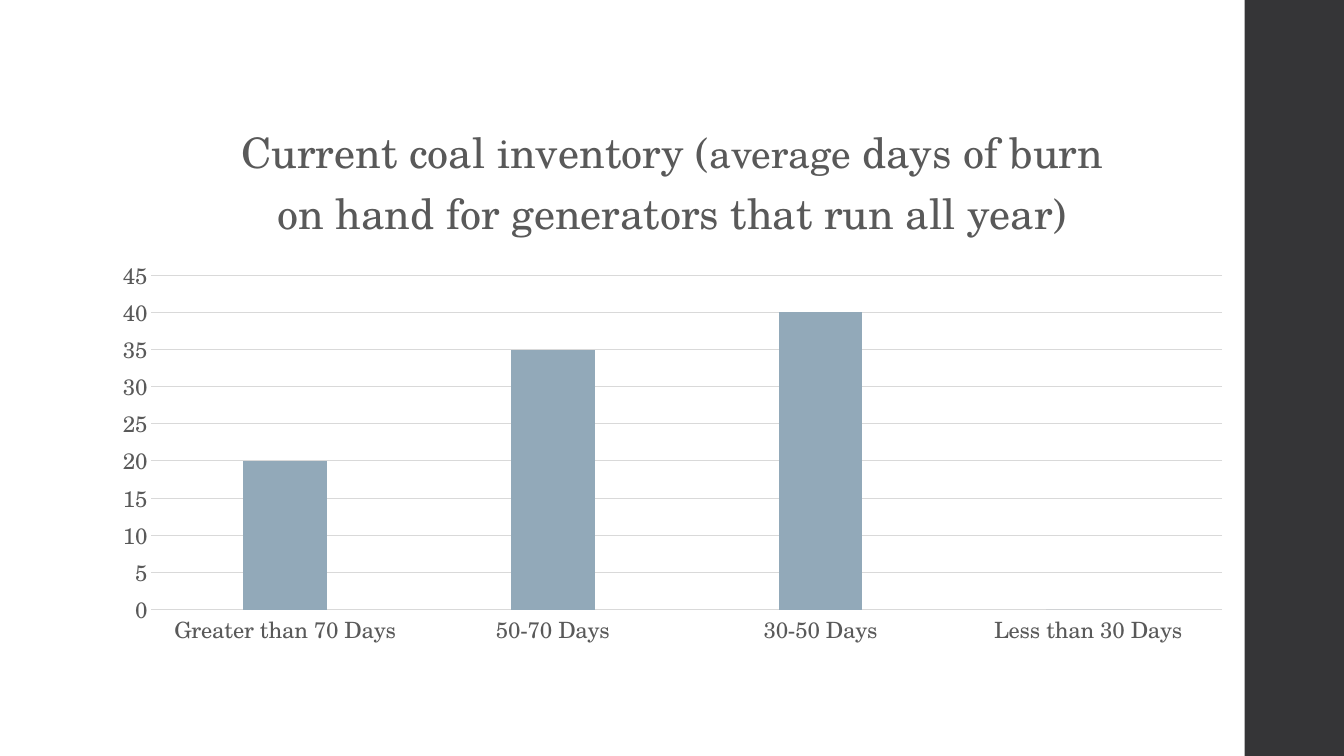
from dataclasses import dataclass

import pptx
import pptx.chart.data
import pptx.dml.color
import pptx.enum.chart
import pptx.enum.shapes
import pptx.oxml
import pptx.util
from pptx.oxml import ns

Pt = pptx.util.Pt
RGBColor = pptx.dml.color.RGBColor

FONT = "TeX Gyre Schola"
CHARCOAL = RGBColor(0x35, 0x35, 0x37)
TEXT_GRAY = RGBColor(0x59, 0x59, 0x59)
RULE_GRAY = RGBColor(0xD9, 0xD9, 0xD9)
BAR_BLUE = RGBColor(0x92, 0xA9, 0xB9)


@dataclass(frozen=True)
class TitlePart:
    text: str
    size: float


@dataclass(frozen=True)
class Inventory:
    days: str
    value: int


HEADING = [
    TitlePart("Current coal inventory (", 30),
    TitlePart("average", 28),
    TitlePart(" days of burn on hand for generators that run all year)", 30),
]
INVENTORIES = [
    Inventory("Greater than 70 Days", 20),
    Inventory("50-70 Days", 35),
    Inventory("30-50 Days", 40),
    Inventory("Less than 30 Days", 0),
]


def style_font(font, size: float) -> None:
    font.name = FONT
    font.size = Pt(size)
    font.bold = False
    font.color.rgb = TEXT_GRAY


def style_rule(line) -> None:
    line.color.rgb = RULE_GRAY
    line.width = Pt(0.75)


def add_side_band(slide) -> None:
    band = slide.shapes.add_shape(
        pptx.enum.shapes.MSO_SHAPE.RECTANGLE, Pt(889), Pt(0), Pt(71), Pt(540))
    band.shadow.inherit = False
    band.fill.solid()
    band.fill.fore_color.rgb = CHARCOAL
    band.line.fill.background()


def add_heading(chart) -> None:
    chart.has_title = True
    paragraph = chart.chart_title.text_frame.paragraphs[0]
    style_font(paragraph.font, 30)
    for part in HEADING:
        run = paragraph.add_run()
        run.text = part.text
        style_font(run.font, part.size)
    chart.chart_title.include_in_layout = False


def place_plot(chart, x: float, y: float, w: float, h: float) -> None:
    """Fix the inner plot area, in fractions of the chart."""
    layout = pptx.oxml.parse_xml(
        f'<c:layout {ns.nsdecls("c")}><c:manualLayout>'
        '<c:layoutTarget val="inner"/><c:xMode val="edge"/><c:yMode val="edge"/>'
        f'<c:x val="{x}"/><c:y val="{y}"/><c:w val="{w}"/><c:h val="{h}"/>'
        '</c:manualLayout></c:layout>')
    plot_area = chart.plots[0]._element.getparent()
    for automatic in plot_area.findall(ns.qn("c:layout")):
        plot_area.remove(automatic)
    plot_area.insert(0, layout)


def add_inventory_chart(slide) -> None:
    data = pptx.chart.data.CategoryChartData()
    data.categories = [item.days for item in INVENTORIES]
    data.add_series("Series 1", [item.value for item in INVENTORIES])
    chart = slide.shapes.add_chart(
        pptx.enum.chart.XL_CHART_TYPE.COLUMN_CLUSTERED,
        Pt(71.3), Pt(71.3), Pt(818), Pt(398), data).chart
    chart.has_legend = False
    chart.font.name = FONT
    chart.font.size = Pt(10)
    add_heading(chart)
    place_plot(chart, 0.045, 0.315, 0.935, 0.6)

    # Columns
    columns = chart.plots[0]
    columns.vary_by_categories = False
    columns.gap_width = 219
    columns.overlap = -27
    bars = columns.series[0].format
    bars.fill.solid()
    bars.fill.fore_color.rgb = BAR_BLUE
    bars.line.fill.background()

    # Axes
    for axis in (chart.category_axis, chart.value_axis):
        axis.major_tick_mark = pptx.enum.chart.XL_TICK_MARK.NONE
        axis.minor_tick_mark = pptx.enum.chart.XL_TICK_MARK.NONE
        style_font(axis.tick_labels.font, 16)
    style_rule(chart.category_axis.format.line)
    days_axis = chart.value_axis
    days_axis.minimum_scale = 0
    days_axis.maximum_scale = 45
    days_axis.major_unit = 5
    days_axis.format.line.fill.background()
    days_axis.has_major_gridlines = True
    style_rule(days_axis.major_gridlines.format.line)


def main() -> None:
    deck = pptx.Presentation()
    deck.slide_width = Pt(960)
    deck.slide_height = Pt(540)
    slide = deck.slides.add_slide(deck.slide_layouts[6])
    add_side_band(slide)
    add_inventory_chart(slide)
    deck.save("out.pptx")


if __name__ == "__main__":
    main()
